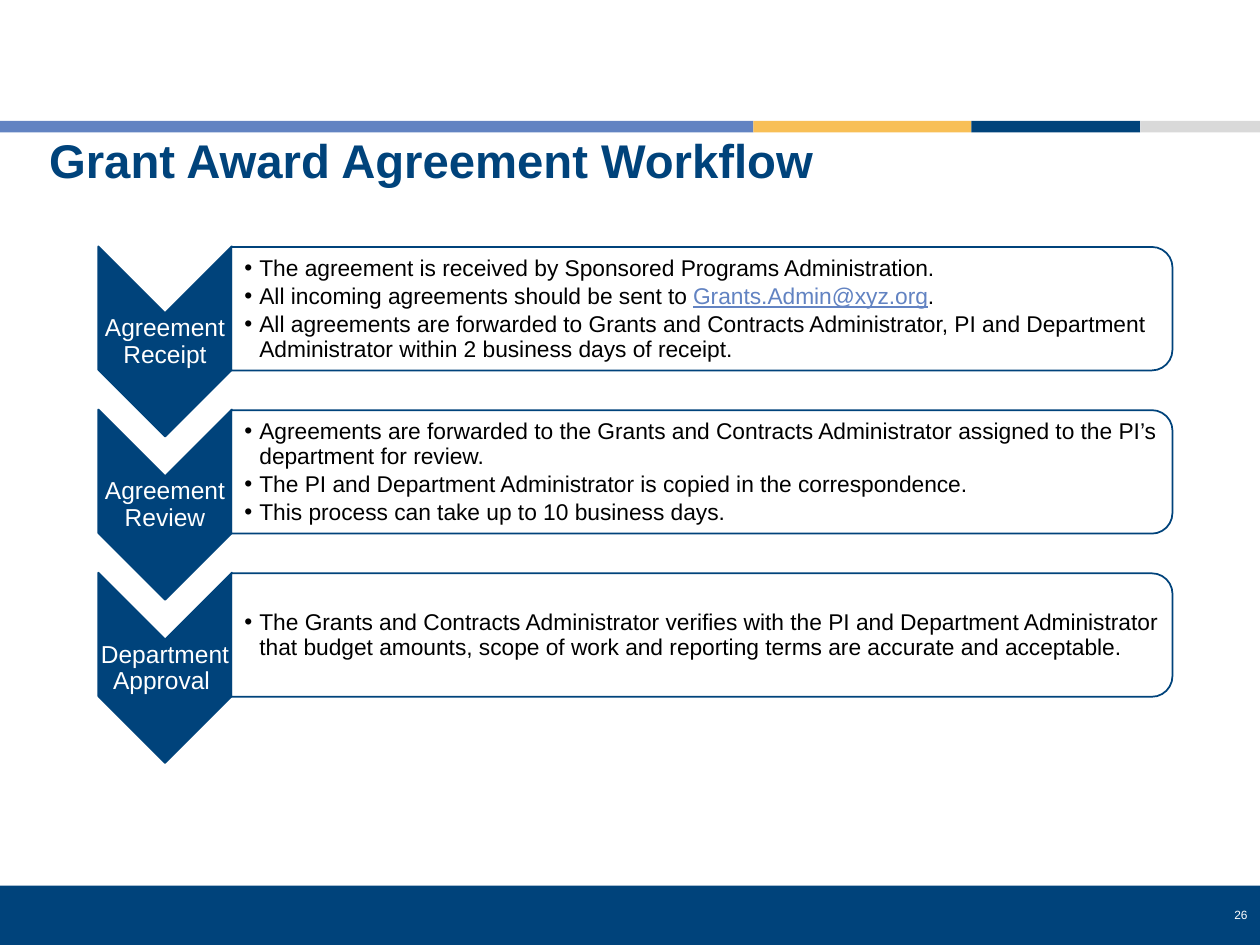
from dataclasses import dataclass

from lxml import etree
from pptx import Presentation
from pptx.dml.color import RGBColor
from pptx.enum import shapes, text
from pptx.oxml import ns
from pptx.util import Inches, Pt


@dataclass(frozen=True)
class Theme:
    font: str = "Arial"
    navy: str = "00437B"
    blue: str = "6283C2"
    gold: str = "F8BF56"
    gray: str = "D9D9D9"
    white: str = "FFFFFF"
    black: str = "000000"
    title_size: float = 27
    label_size: float = 14
    body_size: float = 13
    number_size: float = 6.8


class SlideBuilder:
    def __init__(self, slide, theme):
        self.slide = slide
        self.theme = theme

    def shape(self, kind, left, top, width, height, fill, line=None, rotation=0, alpha=None):
        item = self.slide.shapes.add_shape(
            kind, Inches(left), Inches(top), Inches(width), Inches(height))
        item.shadow.inherit = False
        item.rotation = rotation
        item.fill.solid()
        item.fill.fore_color.rgb = RGBColor.from_string(fill)
        if alpha is not None:
            color = item.fill._xPr.find(ns.qn("a:solidFill"))[0]
            etree.SubElement(color, ns.qn("a:alpha"), val=str(alpha * 1000))
        if line:
            item.line.color.rgb = RGBColor.from_string(line)
            item.line.width = Pt(1)
        else:
            item.line.fill.background()
        return item

    def turned(self, kind, center_x, center_y, width, height, fill, alpha=None):
        """Add a navy-edged shape turned a quarter clockwise about its center."""
        return self.shape(kind, center_x - width / 2, center_y - height / 2, width, height,
                          fill, self.theme.navy, 90, alpha)

    def text(self, left, top, width, height, paragraphs, size, color, bold=False,
             align=text.PP_ALIGN.LEFT, anchor=text.MSO_ANCHOR.MIDDLE,
             insets=(0.1, 0.05, 0.1, 0.05), spacing=0.9, after=0, bullet=False):
        """Each paragraph is a list of (wording, is_link) pairs."""
        box = self.slide.shapes.add_textbox(
            Inches(left), Inches(top), Inches(width), Inches(height))
        frame = box.text_frame
        frame.word_wrap = True
        frame.vertical_anchor = anchor
        (frame.margin_left, frame.margin_top,
         frame.margin_right, frame.margin_bottom) = map(Inches, insets)
        for index, runs in enumerate(paragraphs):
            paragraph = frame.add_paragraph() if index else frame.paragraphs[0]
            if bullet:
                self.bullet(paragraph)
            paragraph.alignment = align
            paragraph.line_spacing = spacing
            paragraph.space_after = Pt(after)
            for wording, is_link in runs:
                run = paragraph.add_run()
                run.text = wording
                run.font.name = self.theme.font
                run.font.size = Pt(size)
                run.font.bold = bold
                run.font.underline = is_link
                run.font.color.rgb = RGBColor.from_string(self.theme.blue if is_link else color)
        return box

    def bullet(self, paragraph, indent=0.12):
        properties = paragraph._p.get_or_add_pPr()
        properties.set("marL", str(Inches(indent)))
        properties.set("indent", str(-Inches(indent)))
        etree.SubElement(properties, ns.qn("a:buFont"), typeface=self.theme.font)
        etree.SubElement(properties, ns.qn("a:buChar"), char="•")

    def step(self, top, label, points):
        """Add one workflow step: down chevron, rounded panel, bullets and label."""
        theme = self.theme
        tight = 0.01
        self.turned(shapes.MSO_SHAPE.CHEVRON, 1.31, top + 0.76, 1.51, 1.06, theme.navy)
        self.turned(shapes.MSO_SHAPE.ROUND_2_SAME_RECTANGLE, 5.57, top + 0.5, 0.98, 7.47,
                    theme.white, alpha=90)
        self.text(1.84, top + 0.06, 7.42, 0.89, points, theme.body_size, theme.black,
                  insets=(0.1, tight, tight, tight), after=2, bullet=True)
        # The label sits in the solid part of the chevron, below its notch
        self.text(0.78, top + 0.54, 1.06, 0.45, [[(label, False)]], theme.label_size, theme.white,
                  align=text.PP_ALIGN.CENTER, insets=(tight,) * 4, after=5)


STEPS = [
    ("Agreement Receipt", [
        [("The agreement is received by Sponsored Programs Administration.", False)],
        [("All incoming agreements should be sent to ", False),
         ("Grants.Admin@xyz.org", True), (".", False)],
        [("All agreements are forwarded to Grants and Contracts Administrator, PI and "
          "Department Administrator within 2 business days of receipt.", False)],
    ]),
    ("Agreement Review", [
        [("Agreements are forwarded to the Grants and Contracts Administrator assigned to "
          "the PI’s department for review.", False)],
        [("The PI and Department Administrator is copied in the correspondence.", False)],
        [("This process can take up to 10 business days.", False)],
    ]),
    ("Department Approval ", [
        [("The Grants and Contracts Administrator verifies with the PI and Department "
          "Administrator that budget amounts, scope of work and reporting terms are "
          "accurate and acceptable.", False)],
    ]),
]


def main():
    theme = Theme()
    deck = Presentation()
    deck.slide_width, deck.slide_height = Inches(10), Inches(7.5)
    builder = SlideBuilder(deck.slides.add_slide(deck.slide_layouts[6]), theme)
    rectangle = shapes.MSO_SHAPE.RECTANGLE

    # Footer band and slide number
    builder.shape(rectangle, 0, 7.03, 10, 0.47, theme.navy)
    builder.text(9.31, 7.15, 0.69, 0.21, [[("26", False)]], theme.number_size, theme.white,
                 align=text.PP_ALIGN.RIGHT, anchor=text.MSO_ANCHOR.TOP, spacing=1.0)

    # Colored stripe: segments meet edge to edge
    stripe = [(0, theme.blue), (5.98, theme.gold), (7.71, theme.navy), (9.05, theme.gray)]
    ends = [left for left, _ in stripe[1:]] + [10]
    for (left, color), right in zip(stripe, ends):
        builder.shape(rectangle, left, 0.96, right - left, 0.09, color)

    # Workflow steps, evenly spaced
    first_top, last_top = 1.95, 4.54
    pitch = (last_top - first_top) / (len(STEPS) - 1)
    for index, (label, points) in enumerate(STEPS):
        builder.step(first_top + index * pitch, label, points)

    # Title
    builder.text(0.32, 1.06, 9.57, 0.48, [[("Grant Award Agreement Workflow", False)]],
                 theme.title_size, theme.navy, bold=True, anchor=text.MSO_ANCHOR.BOTTOM,
                 insets=(0.07, 0.04, 0.07, 0.04))

    deck.save("out.pptx")


if __name__ == "__main__":
    main()
